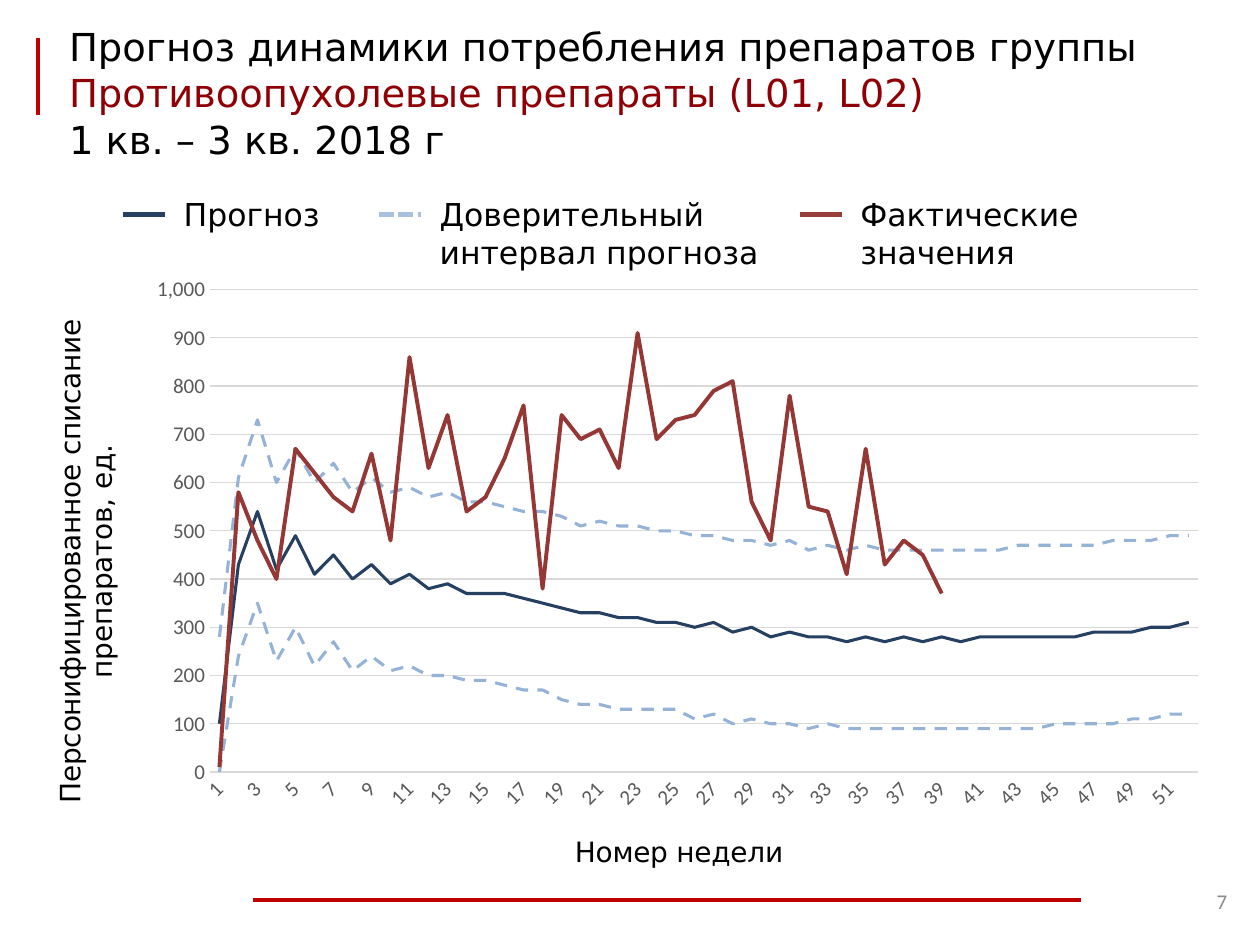
from dataclasses import dataclass

from lxml import etree
from pptx import Presentation
from pptx import util as u
from pptx.chart.data import CategoryChartData
from pptx.dml.color import RGBColor
from pptx.enum import chart as charts, dml, shapes, text
from pptx.oxml import parse_xml
from pptx.oxml.ns import nsdecls, qn

WIDTH, HEIGHT = 10, 7.5


@dataclass(frozen=True)
class Theme:
    body_font: str = "DejaVu Sans"
    number_font: str = "Calibri"
    black: str = "000000"
    red: str = "C00000"
    title_red: str = "8F0006"
    forecast: str = "254061"
    interval: str = "95B3D7"
    interval_key: str = "A9C1DF"
    actual: str = "953735"
    actual_key: str = "983D3B"
    grid: str = "D9D9D9"
    labels: str = "595959"
    page: str = "898989"
    title_size: float = 22
    legend_size: float = 18
    axis_title_size: float = 16
    small_size: float = 12


THEME = Theme()
DASH = dml.MSO_LINE.DASH
KEY_DASH = dml.MSO_LINE.SQUARE_DOT

INTERVAL_NAME = "Доверительный интервал прогноза"
FORECAST = [100, 430, 540, 420, 490, 410, 450, 400, 430, 390, 410, 380, 390,
            370, 370, 370, 360, 350, 340, 330, 330, 320, 320, 310, 310, 300,
            310, 290, 300, 280, 290, 280, 280, 270, 280, 270, 280, 270, 280,
            270, 280, 280, 280, 280, 280, 280, 290, 290, 290, 300, 300, 310]
LOWER = [0, 240, 350, 230, 300, 220, 270, 210, 240, 210, 220, 200, 200,
         190, 190, 180, 170, 170, 150, 140, 140, 130, 130, 130, 130, 110,
         120, 100, 110, 100, 100, 90, 100, 90, 90, 90, 90, 90, 90,
         90, 90, 90, 90, 90, 100, 100, 100, 100, 110, 110, 120, 120]
UPPER = [280, 610, 730, 600, 670, 600, 640, 580, 610, 580, 590, 570, 580,
         560, 560, 550, 540, 540, 530, 510, 520, 510, 510, 500, 500, 490,
         490, 480, 480, 470, 480, 460, 470, 460, 470, 460, 460, 460, 460,
         460, 460, 460, 470, 470, 470, 470, 470, 480, 480, 480, 490, 490]
ACTUAL = [10, 580, 480, 400, 670, 620, 570, 540, 660, 480, 860, 630, 740,
          540, 570, 650, 760, 380, 740, 690, 710, 630, 910, 690, 730, 740,
          790, 810, 560, 480, 780, 550, 540, 410, 670, 430, 480, 450, 370]
WEEKS = len(FORECAST)

# name, values, colour, line width, dash
SERIES = [
    ("Прогноз", FORECAST, THEME.forecast, 1.75, None),
    (INTERVAL_NAME, LOWER, THEME.interval, 1.75, DASH),
    (INTERVAL_NAME, UPPER, THEME.interval, 1.75, DASH),
    ("Фактические значения", ACTUAL, THEME.actual, 2.25, None),
]
# left offset, text width, name, colour, dash
LEGEND = [
    (0, 1.53, "Прогноз", THEME.forecast, None),
    (2.03, 3.29, INTERVAL_NAME, THEME.interval_key, KEY_DASH),
    (5.37, 2.24, "Фактические значения", THEME.actual_key, None),
]


def style_font(font, size, color, name=THEME.body_font):
    font.size, font.name, font.bold = u.Pt(size), name, False
    font.color.rgb = RGBColor.from_string(color)


def style_line(line, color, width, dash=None):
    line.color.rgb = RGBColor.from_string(color)
    line.width = u.Pt(width)
    if dash:
        line.dash_style = dash


def add_line(slide, start, end, color, width, dash=None):
    points = [u.Inches(length) for length in (*start, *end)]
    line = slide.shapes.add_connector(shapes.MSO_CONNECTOR.STRAIGHT, *points)
    style_line(line.line, color, width, dash)
    etree.SubElement(line._element.spPr, qn("a:effectLst"))


def add_text(slide, box, content, size, colors, font=THEME.body_font,
             anchor=text.MSO_ANCHOR.TOP, align=text.PP_ALIGN.LEFT):
    """Add one paragraph; \\v breaks a line and each line takes its own colour."""
    frame = slide.shapes.add_textbox(*map(u.Inches, box)).text_frame
    frame.word_wrap, frame.vertical_anchor = True, anchor
    paragraph = frame.paragraphs[0]
    paragraph.text, paragraph.alignment = content, align
    for run, color in zip(paragraph.runs, colors):
        style_font(run.font, size, color, font)


def add_title(slide, box):
    left, top, width, height = box
    add_line(slide, (left, top), (left, top + height), THEME.red, 2.25)
    add_text(slide, (left + 0.15, top + 0.13, width - 0.15, height),
             "Прогноз динамики потребления препаратов группы\v"
             "Противоопухолевые препараты (L01, L02)\v1 кв. – 3 кв. 2018 г",
             THEME.title_size, (THEME.black, THEME.title_red, THEME.black),
             anchor=text.MSO_ANCHOR.MIDDLE)


def add_legend(slide, left, top):
    for offset, width, name, color, dash in LEGEND:
        key_left, middle = left + offset, top + 0.2
        add_line(slide, (key_left, middle), (key_left + 0.33, middle), color, 2.75, dash)
        height = 0.4 if " " not in name else 0.71
        add_text(slide, (key_left + 0.38, top, width, height), name,
                 THEME.legend_size, [THEME.black])


def set_layout(parent, before, **shares):
    """Place a chart part by shares of the chart, ahead of the given sibling tags."""
    for old in parent.findall(qn("c:layout")):
        parent.remove(old)
    inner = '<c:layoutTarget val="inner"/>' if "w" in shares else ""
    modes = "".join(f'<c:{key}Mode val="edge"/>' for key in "xy")
    sizes = "".join(f'<c:{key} val="{value}"/>' for key, value in shares.items())
    layout = parse_xml(f'<c:layout {nsdecls("c")}><c:manualLayout>{inner}{modes}'
                       f'{sizes}</c:manualLayout></c:layout>')
    sibling = next(child for child in parent if child.tag in map(qn, before))
    sibling.addprevious(layout)


def style_axis(axis, title, rotation, label_rotation, x, y):
    axis.major_tick_mark = axis.minor_tick_mark = charts.XL_TICK_MARK.NONE
    style_font(axis.tick_labels.font, THEME.small_size, THEME.labels, THEME.number_font)
    label_body = axis._element.find(qn("c:txPr")).find(qn("a:bodyPr"))
    label_body.set("rot", str(label_rotation * 60000))
    frame = axis.axis_title.text_frame
    frame.text = title
    style_font(frame.paragraphs[0].runs[0].font, THEME.axis_title_size, THEME.black)
    body = frame._txBody.find(qn("a:bodyPr"))
    body.set("rot", str(rotation * 60000))
    body.set("vert", "horz")
    set_layout(axis.axis_title._element, ["c:overlay"], x=x, y=y)


def add_forecast_chart(slide, box):
    data = CategoryChartData(number_format="General")
    data.categories = [str(week) for week in range(1, WEEKS + 1)]
    for name, values, *_ in SERIES:
        data.add_series(name, values + [None] * (WEEKS - len(values)))
    chart = slide.shapes.add_chart(charts.XL_CHART_TYPE.LINE, *map(u.Inches, box), data).chart
    chart.has_legend = chart.has_title = False
    style_font(chart.font, 10, THEME.black, THEME.number_font)
    plot = chart.plots[0]
    plot.vary_by_categories = False
    for series, (_, _, color, width, dash) in zip(plot.series, SERIES):
        series.smooth = False
        series.marker.style = charts.XL_MARKER_STYLE.NONE
        style_line(series.format.line, color, width, dash)

    weeks, units = chart.category_axis, chart.value_axis
    style_axis(weeks, "Номер недели", 0, -45, 0.45, 0.9)
    style_line(weeks.format.line, THEME.grid, 0.75)
    skip = etree.Element(qn("c:tickLblSkip"), val="2")
    weeks._element.find(qn("c:noMultiLvlLbl")).addprevious(skip)

    style_axis(units, "Персонифицированное списание препаратов, ед.", -90, 0, 0.01, 0.08)
    units.minimum_scale, units.maximum_scale, units.major_unit = 0, 1000, 100
    units.tick_labels.number_format = "#,##0"
    units.tick_labels.number_format_is_linked = False
    units.format.line.fill.background()
    style_line(units.major_gridlines.format.line, THEME.grid, 0.75)
    set_layout(plot._element.getparent(), ["c:lineChart"], x=0.147, y=0.04, w=0.832, h=0.769)


def add_footer(slide, top):
    add_line(slide, (2.01, top), (8.58, top), THEME.red, 2.25)
    add_text(slide, (9.38, top - 0.19, 0.46, 0.4), "7", THEME.small_size, [THEME.page],
             THEME.number_font, text.MSO_ANCHOR.MIDDLE, text.PP_ALIGN.RIGHT)


def main():
    presentation = Presentation()
    presentation.slide_width, presentation.slide_height = u.Inches(WIDTH), u.Inches(HEIGHT)
    slide = presentation.slides.add_slide(presentation.slide_layouts[6])
    add_footer(slide, 0.952 * HEIGHT)
    add_forecast_chart(slide, (0.28, 0.28 * HEIGHT, 0.943 * WIDTH, 0.664 * HEIGHT))
    add_title(slide, (0.03 * WIDTH, 0.04 * HEIGHT, 0.92 * WIDTH, 0.61))
    add_legend(slide, 0.098 * WIDTH, 0.2 * HEIGHT)
    presentation.save("out.pptx")


if __name__ == "__main__":
    main()
